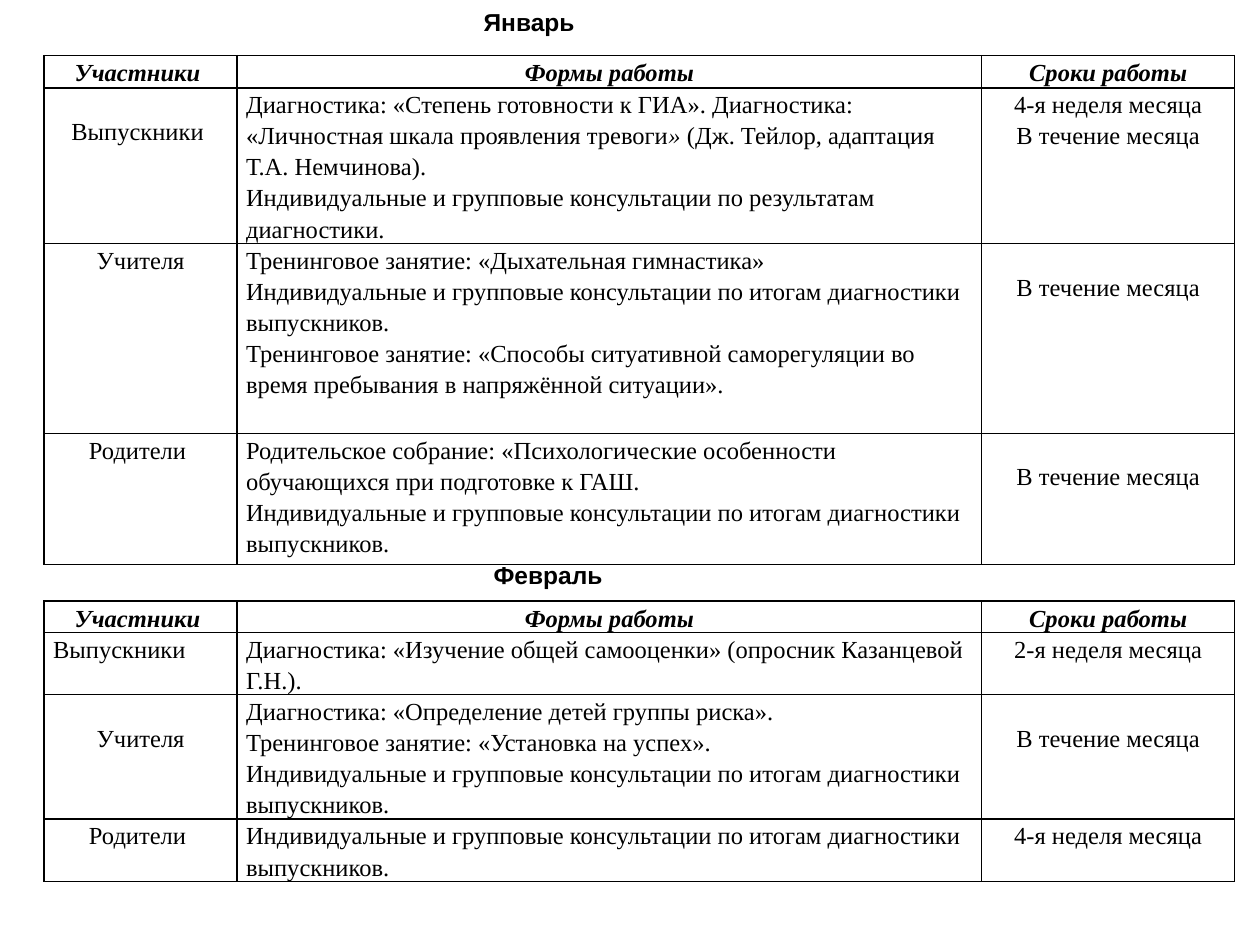
"""Build the January and February work plan slide."""
from lxml import etree
from pptx import Presentation
from pptx import util as u
from pptx.dml.color import RGBColor
from pptx.enum import text
from pptx.oxml import ns

BLACK = RGBColor(0, 0, 0)
LEFT, CENTER = text.PP_ALIGN.LEFT, text.PP_ALIGN.CENTER
DURING = "В течение месяца"
CONSULT = "Индивидуальные и групповые консультации по итогам диагностики выпускников."
HEADER = [["Участники "], ["Формы работы"], ["Сроки работы"]]
COLS = [3.89, 15.01, 5.1]

MONTHS = [
    dict(
        title="Январь", title_at=(9.5, 0), top=1.12, heights=[0.65, 2.8, 3.83, 2.64],
        lowered={(1, 0), (2, 2), (3, 2)}, left_aligned=set(),
        rows=[
            [["Выпускники "],
             ["Диагностика: «Степень готовности к ГИА». Диагностика: «Личностная шкала "
              "проявления тревоги*» *(Дж. Тейлор, адаптация Т.А. Немчинова).",
              "Индивидуальные и групповые консультации по результатам диагностики."],
             ["4-я неделя месяца", DURING]],
            [["Учителя"],
             ["Тренинговое занятие: «Дыхательная гимнастика»", CONSULT,
              "Тренинговое занятие: «Способы ситуативной саморегуляции во время "
              "пребывания в напряжённой ситуации»."],
             [DURING]],
            [["Родители "],
             ["Родительское собрание: «Психологические особенности обучающихся "
              "при подготовке к ГАШ.", CONSULT],
             [DURING]],
        ]),
    dict(
        title="Февраль", title_at=(9.7, 11.13), top=12.12, heights=[0.61, 1.22, 2.46, 1.22],
        lowered={(2, 0), (2, 2)}, left_aligned={(1, 0)},
        rows=[
            [["Выпускники"],
             ["Диагностика: «Изучение общей самооценки» (опросник Казанцевой Г.Н.)."],
             ["2-я неделя месяца"]],
            [["Учителя"],
             ["Диагностика: «Определение детей группы риска».",
              "Тренинговое занятие: «Установка на успех».", CONSULT],
             [DURING]],
            [["Родители "], [CONSULT], ["4-я неделя месяца"]],
        ]),
]


def write(tf, paragraphs, font="Times New Roman", bold=False, italic=False,
          align=LEFT, spacing=1.15):
    """Fill a text frame; asterisks enclose italic words."""
    for i, line in enumerate(paragraphs):
        p = tf.paragraphs[0] if i == 0 else tf.add_paragraph()
        p.alignment, p.line_spacing = align, spacing
        for k, part in enumerate(line.split("*")):
            r = p.add_run()
            r.text = part
            r.font.name, r.font.size = font, u.Pt(14)
            r.font.bold, r.font.italic = bold, italic or k % 2 == 1
            r.font.color.rgb = BLACK


def add_borders(cell):
    """Draw a thin black line on each side of a cell."""
    tc_pr = cell._tc.get_or_add_tcPr()
    for side in ("lnL", "lnR", "lnT", "lnB"):
        ln = etree.SubElement(tc_pr, ns.qn(f"a:{side}"), w=str(u.Pt(1)))
        fill = etree.SubElement(ln, ns.qn("a:solidFill"))
        etree.SubElement(fill, ns.qn("a:srgbClr"), val=str(BLACK))


prs = Presentation()
prs.slide_width, prs.slide_height = u.Cm(25.4), u.Cm(19.05)
s = prs.slides.add_slide(prs.slide_layouts[6])

for month in MONTHS:
    rows = [HEADER] + month["rows"]
    heights = month["heights"]
    tbl = s.shapes.add_table(len(rows), len(COLS), u.Cm(0.89), u.Cm(month["top"]),
                             u.Cm(sum(COLS)), u.Cm(sum(heights))).table
    tbl.horz_banding = False
    for col, width in zip(tbl.columns, COLS):
        col.width = u.Cm(width)
    for i, row in enumerate(rows):
        tbl.rows[i].height = u.Cm(heights[i])
        for j, paragraphs in enumerate(row):
            cell = tbl.cell(i, j)
            add_borders(cell)
            cell.fill.background()
            cell.margin_left = cell.margin_right = u.Cm(0.18)
            cell.margin_top = u.Cm(0.54 if (i, j) in month["lowered"] else 0)
            cell.margin_bottom = 0
            header = i == 0
            left = (j == 1 and not header) or (i, j) in month["left_aligned"]
            write(cell.text_frame, paragraphs, bold=header, italic=header,
                  align=LEFT if left else CENTER)

for month in MONTHS:
    x, y = month["title_at"]
    sp = s.shapes.add_textbox(u.Cm(x), u.Cm(y), u.Cm(3.6), u.Cm(1.5))
    tf = sp.text_frame
    tf.word_wrap = True
    tf.vertical_anchor = text.MSO_ANCHOR.TOP
    tf.margin_top, tf.margin_bottom = u.Cm(0.15), 0
    write(tf, [month["title"]], font="Arial", bold=True, spacing=1.0)

prs.save("out.pptx")
